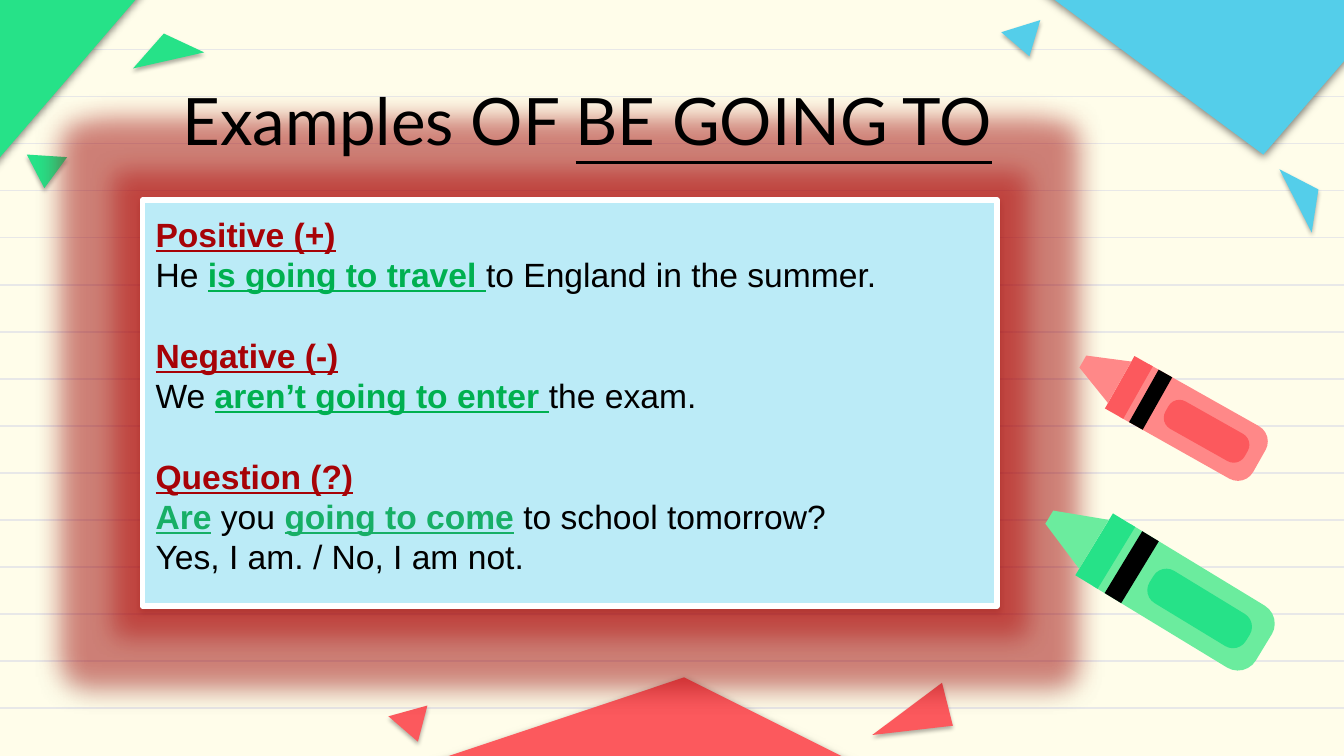
from math import cos, radians, sin

from lxml.etree import SubElement
from pptx import Presentation
from pptx.dml.color import RGBColor
from pptx.enum.shapes import MSO_CONNECTOR as Connector, MSO_SHAPE as Shape
from pptx.enum.text import MSO_ANCHOR as Anchor, PP_ALIGN as Align
from pptx.oxml.ns import qn
from pptx.util import Pt

COLORS = {
    "paper": "FFFDEA", "rule": "E8E8E8", "white": "FFFFFF", "black": "000000",
    "red": "FC595D", "light red": "FF8888", "blue": "54CEEA",
    "green": "26E288", "light green": "6BEC9E", "panel": "BBEBF7",
    "glow": "C00000", "heading": "A70307", "verb": "00B050", "question verb": "17AF66",
}

# Content: each run is text and the colour of its emphasis, if any
TITLE = [("Examples OF ", False), ("BE GOING TO", True)]
EXAMPLES = [
    [("Positive (+)", "heading")],
    [("He ", None), ("is going to travel ", "verb"),
     ("to England in the summer.", None)],
    [("Negative (-)", "heading")],
    [("We ", None), ("aren’t going to enter ", "verb"), ("the exam.", None)],
    [("Question (?)", "heading")],
    [("Are", "question verb"), (" you ", None), ("going to come", "question verb"),
     (" to school tomorrow?", None)],
    [("Yes, I am. / No, I am not.", None)],
]
LINE_HEIGHT = 21.6

# Shadows: opacity in percent, blur, distance
STRONG_SHADOW, SOFT_SHADOW, PANEL_SHADOW = (50, 4.5, 1.5), (31, 2.2, 1.5), (38, 3.1, 1.6)

LARGE_TRIANGLES = [
    ("red", [(103.7, 450.7), (542.2, 450.7), (366.5, 362.9)]),
    ("blue", [(820, -83), (535, -22.3), (676.8, 82.8)]),
    ("green", [(124.6, -60.5), (-159.8, -0.7), (-18, 105.1)]),
]
SMALL_TRIANGLES = [
    ("green", [(109.4, 28.1), (87.8, 18), (71.3, 36.7)]),
    ("red", [(229, 378), (208.1, 383.8), (223.9, 397.4)]),
    ("green", [(36, 84.2), (14.4, 82.8), (23.8, 100.8)]),
    ("red", [(467.3, 393.8), (510.5, 388.8), (504.7, 365.8)]),
    ("blue", [(557.3, 10.8), (536.4, 17.3), (551.5, 30.2)]),
    ("blue", [(702.7, 124.6), (706.3, 101.5), (685.4, 90.7)]),
]

# Crayons: colour, shoulder centre, angle, length unit, thickness
CRAYONS = [("red", (599.8, 204.8), 29.4, 32.3, 32.3),
           ("green", (586.1, 291.6), 31.3, 40, 38.8)]
# Parts along the axis: shape, start, end, thickness, tint, corner adjustment, turn
CRAYON_PARTS = [
    (Shape.ROUND_2_SAME_RECTANGLE, 0.28, 2.66, 1, "light ", 0.29, 90),
    (Shape.RECTANGLE, 0, 0.35, 1, "", None, 90),
    (Shape.ROUNDED_RECTANGLE, 0.9, 2.41, 0.52, "", 0.4, 90),
    (Shape.RECTANGLE, 0.46, 0.72, 1, "black", None, 90),
    (Shape.TRAPEZOID, -0.7, 0, 0.79, "light ", 0.4, -90),
]


def rgb(name):
    return RGBColor.from_string(COLORS[name])


def fill_plain(shape, color):
    shape.shadow.inherit = False
    shape.fill.solid()
    shape.fill.fore_color.rgb = rgb(color)
    shape.line.fill.background()


def add_effect(shape, tag, color, opacity, **lengths):
    effects = shape._element.spPr.find(qn("a:effectLst"))
    effect = SubElement(effects, qn(f"a:{tag}"))
    for name, value in lengths.items():
        effect.set(name, str(int(value)))
    color_element = SubElement(effect, qn("a:srgbClr"), val=COLORS[color])
    SubElement(color_element, qn("a:alpha"), val=str(opacity * 1000))


def add_shadow(shape, opacity, blur, distance):
    add_effect(shape, "outerShdw", "black", opacity,
               blurRad=Pt(blur), dist=Pt(distance), dir=90 * 60000)


def add_triangle(slide, color, corners, shadow):
    start, *others = [(Pt(x), Pt(y)) for x, y in corners]
    builder = slide.shapes.build_freeform(*start, scale=1)
    builder.add_line_segments(others, close=True)
    triangle = builder.convert_to_shape()
    fill_plain(triangle, color)
    add_shadow(triangle, *shadow)


def add_crayon(slide, color, shoulder, angle, unit, thickness):
    for kind, start, end, share, tint, corner, turn in CRAYON_PARTS:
        middle = (start + end) / 2 * unit
        x = shoulder[0] + middle * cos(radians(angle))
        y = shoulder[1] + middle * sin(radians(angle))
        width, height = share * thickness, (end - start) * unit
        part = slide.shapes.add_shape(kind, Pt(x - width / 2), Pt(y - height / 2),
                                      Pt(width), Pt(height))
        part.rotation = angle + turn
        if corner is not None:
            part.adjustments[0] = corner
        fill_plain(part, tint if tint == "black" else tint + color)


def set_frame(frame, anchor):
    frame.word_wrap = True
    frame.vertical_anchor = anchor
    frame.margin_left = frame.margin_right = Pt(7.2)
    frame.margin_top = frame.margin_bottom = Pt(7.2)


presentation = Presentation()
presentation.slide_width, presentation.slide_height = Pt(720), Pt(405)
slide = presentation.slides.add_slide(presentation.slide_layouts[6])
slide.background.fill.solid()
slide.background.fill.fore_color.rgb = rgb("paper")

# Ruled paper
for row in range(15):
    y = Pt(26.6 + 25.2 * row)
    rule = slide.shapes.add_connector(Connector.STRAIGHT, 0, y, Pt(722.9), y)
    rule.line.color.rgb = rgb("rule")
    rule.line.width = Pt(0.75)
    SubElement(rule._element.spPr, qn("a:effectLst"))

# Paper triangles
for triangles, shadow in ((LARGE_TRIANGLES, STRONG_SHADOW), (SMALL_TRIANGLES, SOFT_SHADOW)):
    for color, corners in triangles:
        add_triangle(slide, color, corners, shadow)

# Examples panel
panel = slide.shapes.add_shape(Shape.RECTANGLE, Pt(76.3), Pt(107.3), Pt(457.9), Pt(217.4))
fill_plain(panel, "panel")
panel.line.color.rgb = rgb("white")
panel.line.width = Pt(3)
add_effect(panel, "glow", "glow", 40, rad=Pt(28))
add_shadow(panel, *PANEL_SHADOW)
frame = panel.text_frame
set_frame(frame, Anchor.TOP)
for index, runs in enumerate(EXAMPLES):
    paragraph = frame.add_paragraph() if index else frame.paragraphs[0]
    paragraph.alignment = Align.LEFT
    paragraph.line_spacing = Pt(LINE_HEIGHT)
    if index and runs[0][1] == "heading":
        paragraph.space_before = Pt(LINE_HEIGHT)
    paragraph.font.name = "Arial"
    paragraph.font.size = Pt(18)
    for text, emphasis in runs:
        run = paragraph.add_run()
        run.text = text
        run.font.color.rgb = rgb(emphasis or "black")
        run.font.bold = run.font.underline = emphasis is not None

# Title
title = slide.shapes.add_textbox(Pt(49), Pt(34.6), Pt(531.4), Pt(59))
set_frame(title.text_frame, Anchor.MIDDLE)
paragraph = title.text_frame.paragraphs[0]
paragraph.alignment = Align.CENTER
paragraph.font.name = "Lato"
paragraph.font.size = Pt(35)
paragraph.font.color.rgb = rgb("black")
for text, underlined in TITLE:
    run = paragraph.add_run()
    run.text = text
    run.font.underline = underlined

# Crayons
for crayon in CRAYONS:
    add_crayon(slide, *crayon)

presentation.save("out.pptx")
